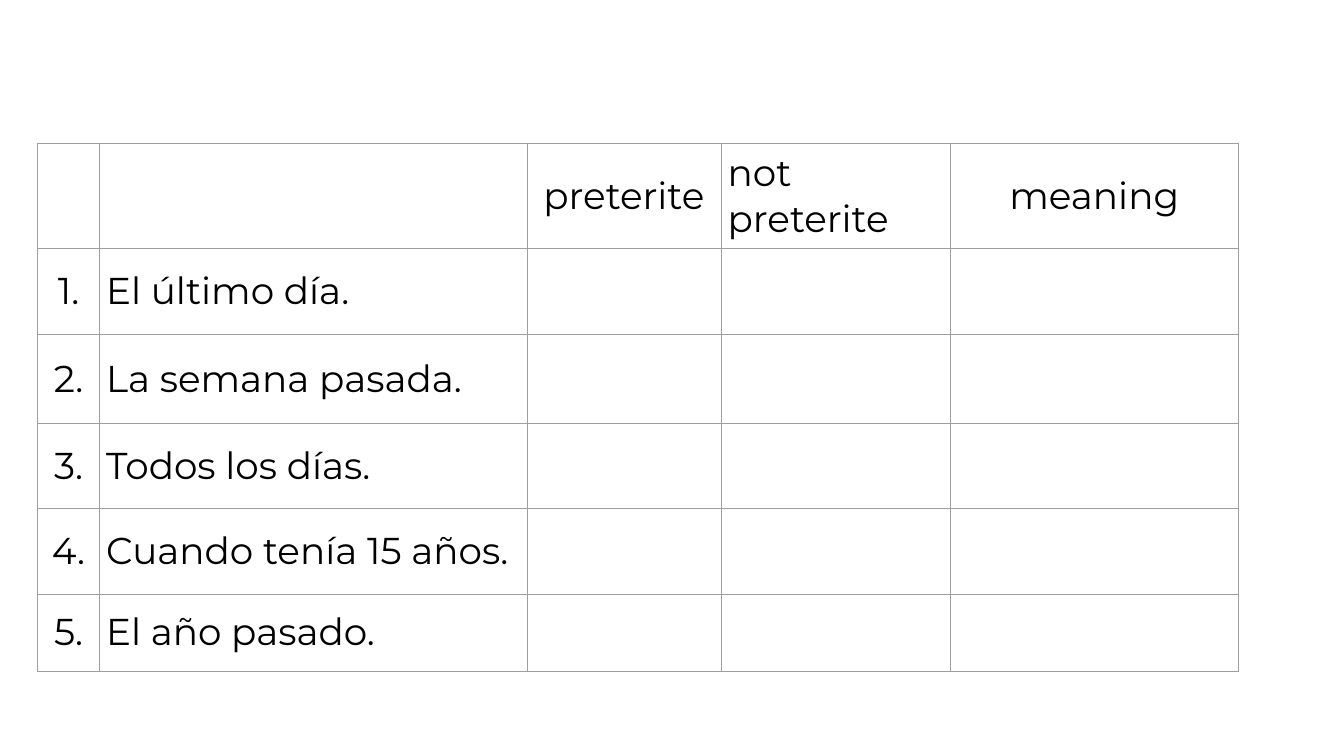
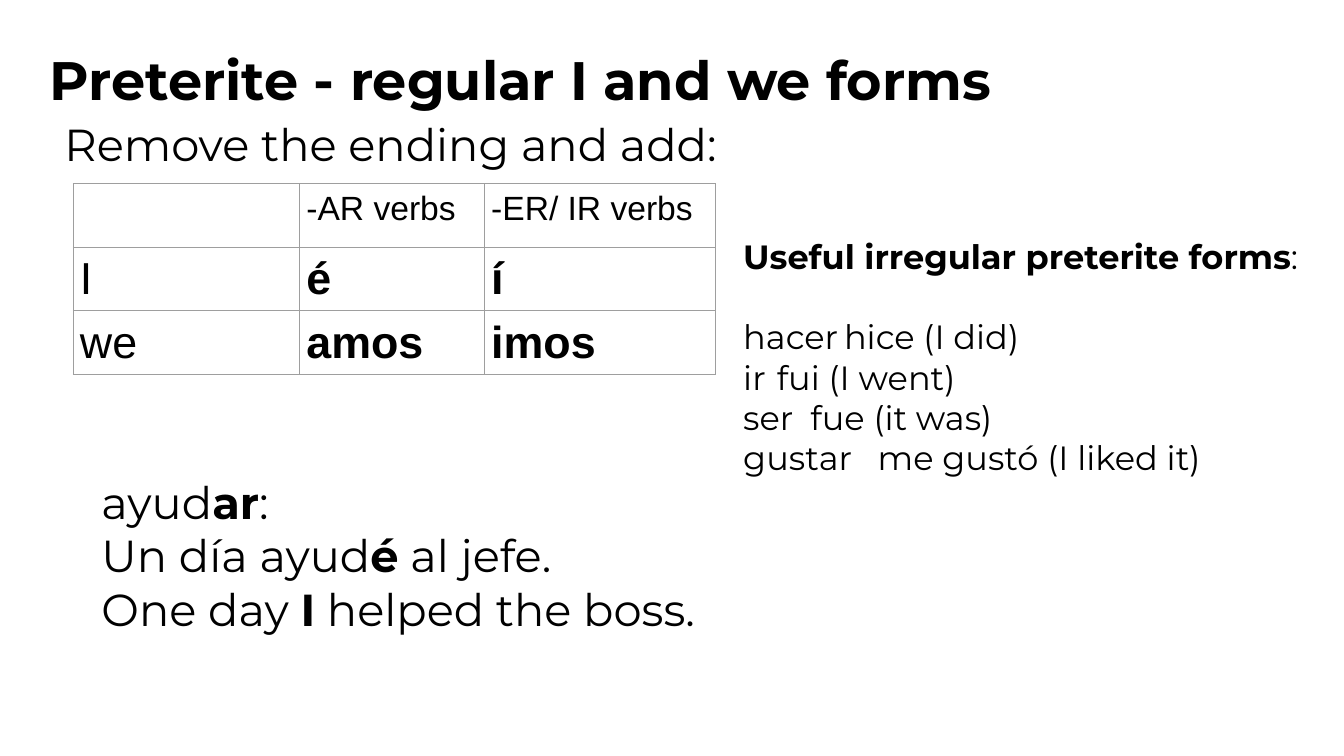
from dataclasses import dataclass
from lxml.etree import SubElement
from pptx import Presentation
from pptx.dml.color import RGBColor
from pptx.enum.text import MSO_ANCHOR as Anchor, MSO_AUTO_SIZE as AutoSize, PP_ALIGN as Align
from pptx.oxml import parse_xml
from pptx.oxml.ns import nsdecls, qn
from pptx.util import Inches, Pt


@dataclass(frozen=True)
class Theme:
    ink: RGBColor = RGBColor(0, 0, 0)
    rule: str = "9E9E9E"
    main_font: str = "Montserrat"
    table_font: str = "Arial"
    title: int = 58
    large: int = 48
    medium: int = 40
    small: int = 36
    inset: float = 0.1
    title_inset: float = 0.2


theme = Theme()
deck = Presentation()
deck.slide_width, deck.slide_height = Inches(20), Inches(11.25)
column, row = deck.slide_width / 100, deck.slide_height / 100


def write(frame, lines, size, font=theme.main_font, align=Align.LEFT, bold=False, tabs=()):
    for index, line in enumerate(lines):
        para = frame.paragraphs[0] if index == 0 else frame.add_paragraph()
        properties = para._p.get_or_add_pPr()
        properties.set("marL", "0")
        properties.set("indent", "0")
        SubElement(properties, qn("a:buNone"))
        if tabs and tabs[index]:
            stops = SubElement(properties, qn("a:tabLst"))
            SubElement(stops, qn("a:tab"), pos=str(Inches(tabs[index])), algn="l")
        para.alignment = align
        para.space_before = Pt(0)
        para.font.name, para.font.size = font, Pt(size)
        para.font.color.rgb = theme.ink
        para.font.bold = bold
        for part, words in enumerate(line.split("**")):
            if words:
                span = para.add_run()
                span.text = words
                if part % 2:
                    span.font.bold = True


def add_grid(page, left, top, widths, heights):
    frame = page.shapes.add_table(
        len(heights), len(widths), int(left * column), int(top * row),
        int(sum(widths) * column), int(sum(heights) * row))
    table = frame.table
    table.first_row = table.horz_banding = False
    for line, width in zip(table.columns, widths):
        line.width = int(width * column)
    for line, height in zip(table.rows, heights):
        line.height = int(height * row)
    for cell in table.iter_cells():
        cell.fill.background()
        cell.margin_left = cell.margin_right = Inches(theme.inset)
        cell.margin_top = cell.margin_bottom = Inches(theme.inset)
        for position, side in enumerate(("lnL", "lnR", "lnT", "lnB")):
            cell._tc.get_or_add_tcPr().insert(position, parse_xml(
                f'<a:{side} {nsdecls("a")} w="{Pt(0.75)}"><a:solidFill>'
                f'<a:srgbClr val="{theme.rule}"/></a:solidFill></a:{side}>'))
    return table


page = deck.slides.add_slide(deck.slide_layouts[6])
phrases = ["El último día.", "La semana pasada.", "Todos los días.",
           "Cuando tenía 15 años.", "El año pasado."]
exercise = add_grid(page, 2.8, 19.02, [4.6, 31.8, 14.45, 17.05, 21.45],
                    [13.78, 11.38, 11.8, 11.2, 11.38, 10.2])
for cell in exercise.iter_cells():
    cell.vertical_anchor = Anchor.MIDDLE
for position, (heading, align) in enumerate(
        [("preterite", Align.CENTER), ("not preterite", Align.LEFT), ("meaning", Align.CENTER)], 2):
    write(exercise.cell(0, position).text_frame, [heading], theme.medium, align=align)
for number, phrase in enumerate(phrases, 1):
    write(exercise.cell(number, 0).text_frame, [f"{number}."], theme.medium, align=Align.CENTER)
    write(exercise.cell(number, 1).text_frame, [phrase], theme.medium)

page = deck.slides.add_slide(deck.slide_layouts[3])
title, examples, irregulars = page.placeholders
endings = add_grid(page, 5.45, 24.27, [16.85, 13.75, 17.15], [8.42] * 3)
subtitle = page.shapes.add_textbox(0, 0, 0, 0)
for box, left, top, width, height, inset in [
        (title, 2.7, 4.36, 94.3, 10.84, theme.title_inset),
        (subtitle, 4.3, 14.49, 71.3, 10.84, theme.inset),
        (examples, 7.05, 61.87, 85.6, 10.84, theme.inset),
        (irregulars, 54.8, 30.31, 42.8, 33.24, theme.inset)]:
    box.left, box.top = int(left * column), int(top * row)
    box.width, box.height = int(width * column), int(height * row)
    frame = box.text_frame
    frame.word_wrap, frame.auto_size = True, AutoSize.NONE
    frame.vertical_anchor = Anchor.TOP
    frame.margin_left = frame.margin_right = Inches(inset)
    frame.margin_top = frame.margin_bottom = Inches(inset)

write(title.text_frame, ["Preterite - regular I and we forms"], theme.title, bold=True)
write(subtitle.text_frame, ["Remove the ending and add:"], theme.large)
write(examples.text_frame, ["ayud**ar**:", "Un día ayud**é** al jefe.",
                            "One day **I** helped the boss."], theme.large)
write(irregulars.text_frame, ["**Useful irregular preterite forms**:", "hacer\thice (I did)",
                              "ir\tfui (I went)", "ser\tfue (it was)",
                              "gustar\tme gustó (I liked it)"],
      theme.small, tabs=[0, 2, 4, 3, 2])
irregulars.text_frame.paragraphs[1].space_before = Pt(43)

for line, entries in enumerate([["", "-AR verbs", "-ER/ IR verbs"],
                                ["I", "é", "í"], ["we", "amos", "imos"]]):
    for position, entry in enumerate(entries):
        if entry:
            write(endings.cell(line, position).text_frame, [entry],
                  theme.large if line else theme.small, theme.table_font,
                  bold=line > 0 and position > 0)

deck.save("out.pptx")
